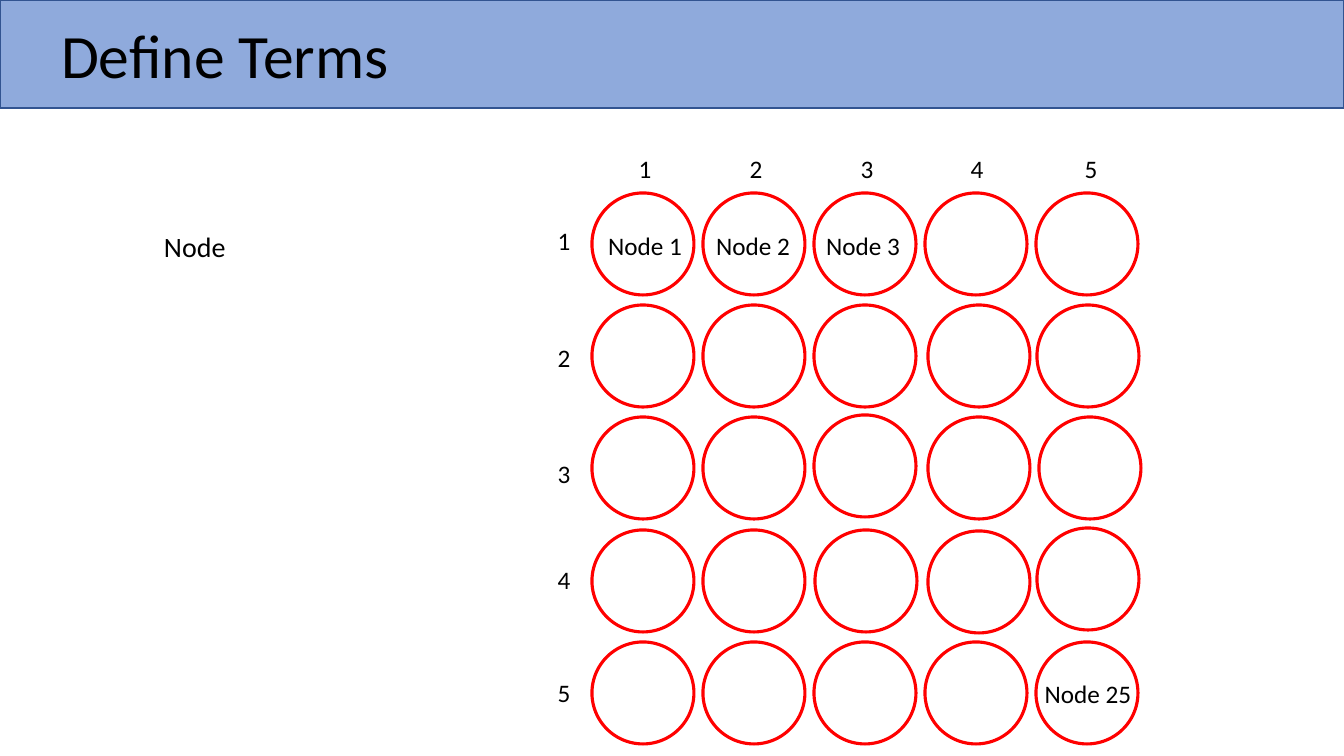
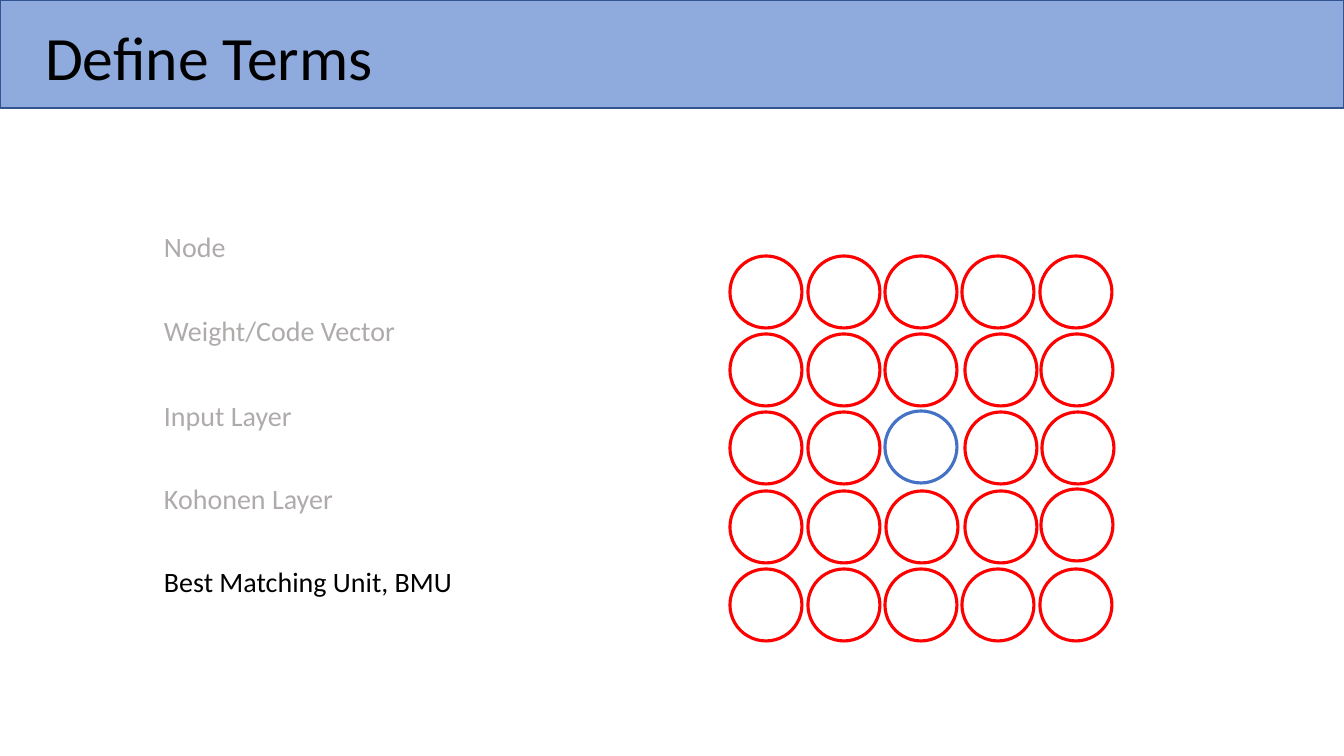
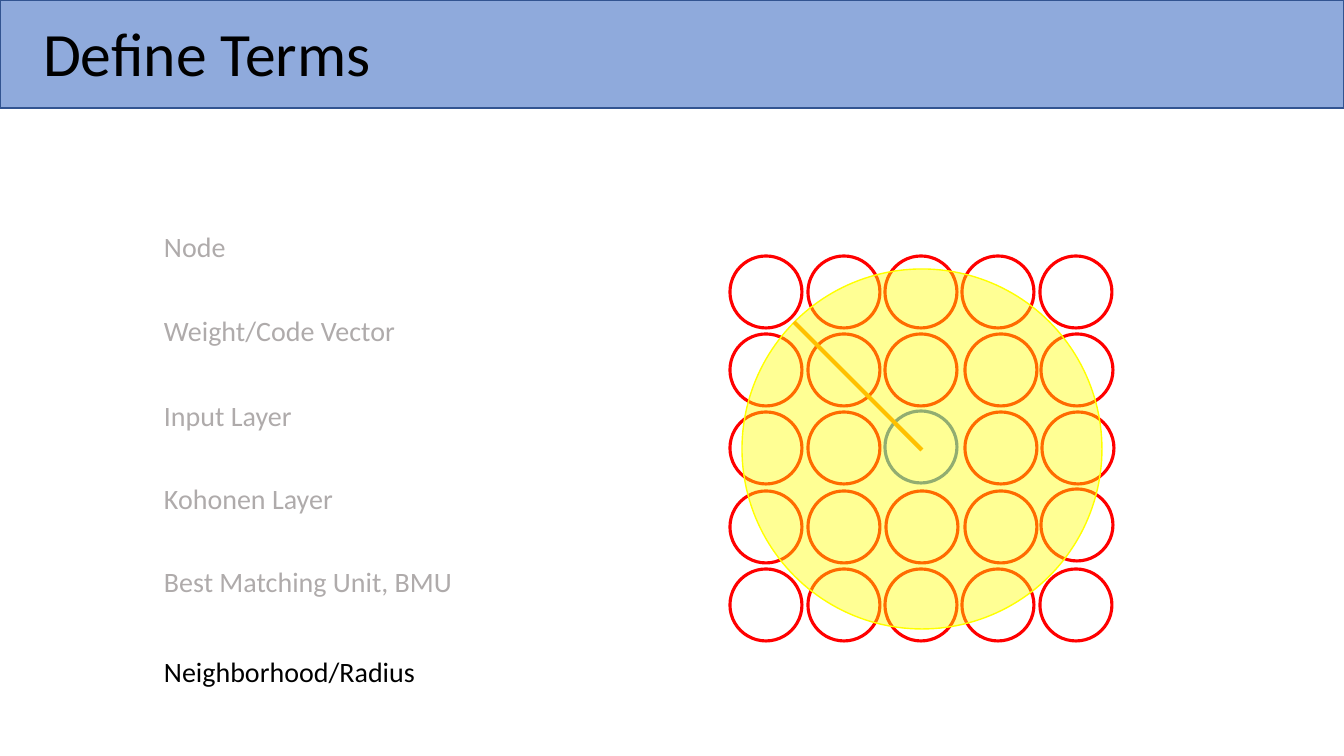
from lxml import etree
from pptx import Presentation
from pptx import util as u
from pptx.dml.color import RGBColor
from pptx.enum import shapes as s, text as t
from pptx.oxml import ns

EMU_PER_INCH = 914400
PX_PER_INCH = 100.8
SLIDE_WIDTH, SLIDE_HEIGHT = 1344, 756
FONT = "Calibri"
BLACK, GREY = "000000", "AFABAB"
BAND_FILL, BAND_LINE = "8FAADC", "325491"
RED, BLUE, YELLOW, ORANGE = "FF0000", "4472C4", "FFFF00", "FFC000"

TERMS = [
    ("Node", 208, 83),
    ("Weight/Code Vector", 292, 253),
    ("Input Layer", 377, 149),
    ("Kohonen Layer", 460, 191),
    ("Best Matching Unit, BMU", 543, 311),
    ("Neighborhood/Radius", 633, 273),
]
COLUMN_CENTRES = [645, 756, 867, 977, 1091]
ROW_TOPS = [220, 337, 453, 559, 672]
NODE_LABELS = [
    ("Node 1", 645, 225),
    ("Node 2", 753, 225),
    ("Node 3", 863, 225),
    ("Node 25", 1088, 673),
]
GRID_COUNT = 5
FULL_DIAMETER = 102
NUDGES = {
    (1, 3): (3, 0), (1, 4): (1, 0),
    (2, 2): (0, -2), (2, 3): (3, 0), (2, 4): (3, 0),
    (3, 2): (1, 0), (3, 3): (3, 1), (3, 4): (1, -2),
}


def px(length):
    return u.Emu(round(length * EMU_PER_INCH / PX_PER_INCH))


def colour(value):
    return RGBColor.from_string(value)


def add_run(paragraph, words, size, ink):
    run = paragraph.add_run()
    run.text = words
    run.font.name = FONT
    run.font.size = u.Pt(size)
    run.font.color.rgb = colour(ink)


def add_shape(shapes, kind, box, line, weight, fill=None):
    shape = shapes.add_shape(kind, *map(px, box))
    shape.shadow.inherit = False
    if fill:
        shape.fill.solid()
        shape.fill.fore_color.rgb = colour(fill)
    else:
        shape.fill.background()
    shape.line.color.rgb = colour(line)
    shape.line.width = u.Pt(weight)
    return shape


def add_text(slide, words, box, size, ink=BLACK, align=t.PP_ALIGN.LEFT, spacing=1.0):
    frame = slide.shapes.add_textbox(*map(px, box)).text_frame
    frame.word_wrap = False
    frame.auto_size = t.MSO_AUTO_SIZE.SHAPE_TO_FIT_TEXT
    paragraph = frame.paragraphs[0]
    paragraph.alignment = align
    paragraph.line_spacing = spacing
    add_run(paragraph, words, size, ink)


def add_label(slide, words, centre, top, width):
    box = (centre - width // 2, top, width, 40)
    add_text(slide, words, box, 18, align=t.PP_ALIGN.CENTER)


def add_terms(slide, count):
    for index, (words, top, width) in enumerate(TERMS[:count]):
        ink = BLACK if index == count - 1 else GREY
        add_text(slide, words, (154, top, width, 55), 20, ink, spacing=1.5)


def add_nodes(shapes, left, top, span_x, span_y, diameter, best=None):
    scale = diameter / FULL_DIAMETER
    for row in range(GRID_COUNT):
        for column in range(GRID_COUNT):
            shift_x, shift_y = NUDGES.get((row, column), (0, 0))
            x = left + round(column * span_x / (GRID_COUNT - 1) + shift_x * scale)
            y = top + round(row * span_y / (GRID_COUNT - 1) + shift_y * scale)
            line = BLUE if (row, column) == best else RED
            add_shape(shapes, s.MSO_SHAPE.OVAL, (x, y, diameter, diameter), line, 2.25)


def add_small_nodes(slide):
    add_nodes(slide.shapes, 730, 256, 310, 313, 72, best=(2, 2))


def add_neighborhood(slide):
    disk = add_shape(slide.shapes, s.MSO_SHAPE.OVAL, (742, 269, 360, 360), YELLOW, 1, YELLOW)
    fill_colour = disk.element.spPr.find(ns.qn("a:solidFill"))[0]
    etree.SubElement(fill_colour, ns.qn("a:alpha")).set("val", "42000")
    radius = slide.shapes.add_connector(
        s.MSO_CONNECTOR.STRAIGHT, px(922), px(450), px(794), px(322))
    radius.line.color.rgb = colour(ORANGE)
    radius.line.width = u.Pt(3)
    etree.SubElement(radius.element.spPr, ns.qn("a:effectLst"))


def add_slide(presentation, layout, title_left, title_top):
    slide = presentation.slides.add_slide(layout)
    title = slide.shapes.title
    title.left, title.top = px(title_left), px(title_top)
    title.width, title.height = px(1159), px(86)
    frame = title.text_frame
    frame.word_wrap = True
    frame.auto_size = t.MSO_AUTO_SIZE.NONE
    frame.vertical_anchor = t.MSO_ANCHOR.MIDDLE
    paragraph = frame.paragraphs[0]
    paragraph.alignment = t.PP_ALIGN.LEFT
    paragraph.line_spacing = 0.9
    add_run(paragraph, "Define Terms", 44, BLACK)
    return slide


def move_band_to_layout(slide, layout):
    band = add_shape(slide.shapes, s.MSO_SHAPE.RECTANGLE,
                     (0, 0, SLIDE_WIDTH, 108), BAND_LINE, 1, BAND_FILL)
    layout.shapes.element.insert(2, band.element)


def build_node_slide(slide):
    add_terms(slide, 1)
    group = slide.shapes.add_group_shape()
    add_nodes(group.shapes, 592, 193, 444, 449, FULL_DIAMETER)
    for words, centre, top in NODE_LABELS:
        add_label(slide, words, centre, top, 108)
    for number, (centre, top) in enumerate(zip(COLUMN_CENTRES, ROW_TOPS), 1):
        add_label(slide, str(number), centre, 148, 40)
        add_label(slide, str(number), 564, top, 40)


def build_matching_slide(slide):
    add_terms(slide, 5)
    add_small_nodes(slide)


def build_neighborhood_slide(slide):
    add_terms(slide, 6)
    add_small_nodes(slide)
    add_neighborhood(slide)


def main():
    presentation = Presentation()
    presentation.slide_width = px(SLIDE_WIDTH)
    presentation.slide_height = px(SLIDE_HEIGHT)
    layout = presentation.slide_layouts.get_by_name("Title Only")
    node_slide = add_slide(presentation, layout, 51, 16)
    move_band_to_layout(node_slide, layout)
    build_node_slide(node_slide)
    build_matching_slide(add_slide(presentation, layout, 35, 18))
    build_neighborhood_slide(add_slide(presentation, layout, 33, 14))
    presentation.save("out.pptx")


if __name__ == "__main__":
    main()
